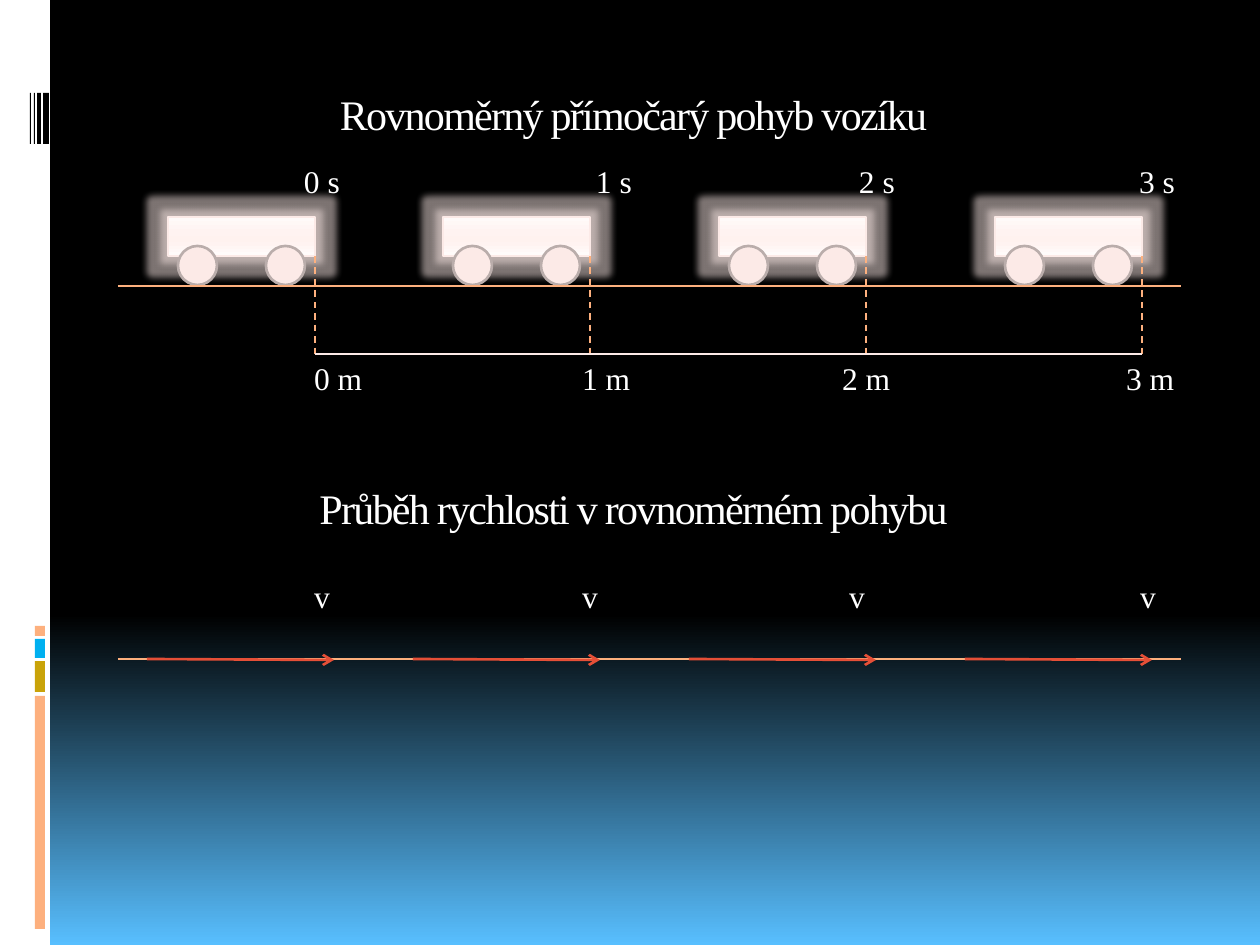
from lxml import etree
from pptx import Presentation
from pptx import util as u
from pptx.dml.color import RGBColor
from pptx.enum import dml, shapes, text
from pptx.oxml import ns

EMU_PER_PX = 914400 / 126
FONT = "Times New Roman"
WHITE, BLACK, PEACH, PINK, RED = "FFFFFF", "000000", "FDB07E", "FCEAE7", "E54F37"
BACKGROUND_STOPS = [(0, BLACK), (65, BLACK), (100, "58BFFF")]
CART_STOPS = [(0, "FFFAF9"), (40, "FFF3F1"), (50, "FFF2EF"), (65, "FFF3F1"), (100, "FFFBFA")]
CART_WIDTH, CART_HEIGHT, WHEEL = 147, 39, 39


def px(length):
    return u.Emu(round(length * EMU_PER_PX))


def rgb(value):
    return RGBColor.from_string(value)


def add_element(parent, tag, **attributes):
    return etree.SubElement(parent, ns.qn(tag), attributes)


def fill_gradient(fill, owner, stops):
    """Fill from top to bottom; owner is the XML element holding the fill."""
    fill.gradient()
    fill.gradient_angle = 270
    stop_list = owner.find(".//" + ns.qn("a:gsLst"))
    for old in list(stop_list):
        stop_list.remove(old)
    for percent, color in stops:
        stop = add_element(stop_list, "a:gs", pos=str(percent * 1000))
        add_element(stop, "a:srgbClr", val=color)


def add_figure(page, kind, left, top, width, height, color, line=None, line_width=1):
    figure = page.shapes.add_shape(kind, px(left), px(top), px(width), px(height))
    figure.shadow.inherit = False
    figure.fill.solid()
    figure.fill.fore_color.rgb = rgb(color)
    if line:
        figure.line.color.rgb = rgb(line)
        figure.line.width = u.Pt(line_width)
    else:
        figure.line.fill.background()
    return figure


def add_line(page, start, end, color, width=0.94, dashed=False, arrow=False):
    line = page.shapes.add_connector(shapes.MSO_CONNECTOR.STRAIGHT, *map(px, start + end))
    line.line.color.rgb = rgb(color)
    line.line.width = u.Pt(width)
    if dashed:
        line.line.dash_style = dml.MSO_LINE.DASH
    properties = line._element.spPr
    if arrow:
        add_element(properties.find(ns.qn("a:ln")), "a:tailEnd", type="arrow")
    add_element(properties, "a:effectLst")


def format_text(para, size):
    for span in para.runs:
        span.font.size = u.Pt(size)
        span.font.name = FONT
        span.font.color.rgb = rgb(WHITE)


def write_heading(box, left, top, words):
    box.left, box.top, box.width, box.height = map(px, (left, top, 1071, 69))
    frame = box.text_frame
    frame.word_wrap = True
    frame.vertical_anchor = text.MSO_ANCHOR.MIDDLE
    frame.text = words
    para = frame.paragraphs[0]
    para.alignment = text.PP_ALIGN.CENTER
    format_text(para, 24)
    para.runs[0].font._element.set("spc", "-100")


def add_label_row(page, left, top, labels, starts):
    """One line of labels, each beginning at its own distance from the left."""
    box = page.shapes.add_textbox(px(left), px(top), px(1063), px(50))
    frame = box.text_frame
    frame.word_wrap = True
    frame.margin_left = px(starts[0])
    frame.text = "\t".join(labels)
    para = frame.paragraphs[0]
    format_text(para, 18)
    tabs = add_element(para._p.get_or_add_pPr(), "a:tabLst")
    for start in starts[1:]:
        add_element(tabs, "a:tab", pos=str(px(start - starts[0])), algn="l")


def add_sidebar(page, left, top):
    rectangle = shapes.MSO_SHAPE.RECTANGLE
    add_figure(page, rectangle, left, top, 50, 945, WHITE)
    for offset, height, color in [(696, 233, PEACH), (661, 31, "C9A309"),
                                  (639, 19, "00B0F0"), (626, 10, PEACH)]:
        add_figure(page, rectangle, left + 35, top + offset, 10, height, color)
    for offset, width in [(43, 6), (37, 4), (34, 1), (30, 1)]:
        add_figure(page, rectangle, left + offset, top + 93, width, 51, BLACK)


def add_cart(page, left, top):
    body = add_figure(page, shapes.MSO_SHAPE.RECTANGLE, left, top, CART_WIDTH, CART_HEIGHT,
                      PINK, PINK, 0.94)
    properties = body._element.spPr
    fill_gradient(body.fill, properties, CART_STOPS)
    glow = add_element(properties.find(ns.qn("a:effectLst")), "a:glow", rad=str(px(14)))
    color = add_element(glow, "a:srgbClr", val=PINK)
    add_element(color, "a:alpha", val="50000")
    for offset in (10, 98):
        add_figure(page, shapes.MSO_SHAPE.OVAL, left + offset, top + 29, WHEEL, WHEEL,
                   PINK, "BAADAB", 1.5)


def add_motion(page, left, top):
    """Carts on the ground, with times above and distances below."""
    cart_lefts = [left + 50 + 827 * index // 3 for index in range(4)]
    fronts = [cart_left + CART_WIDTH for cart_left in cart_lefts]
    cart_top, ground, scale_line = top + 61, top + 130, top + 198
    for cart_left in cart_lefts:
        add_cart(page, cart_left, cart_top)
    add_line(page, (left, ground), (left + 1063, ground), PEACH, 1.5)
    for front in fronts:
        add_line(page, (front, cart_top + CART_HEIGHT), (front, scale_line), PEACH, dashed=True)
    add_line(page, (fronts[0], scale_line), (fronts[-1], scale_line), PINK)
    add_label_row(page, left + 39, top, ["0 s", "1 s", "2 s", "3 s"], [147, 439, 702, 982])
    add_label_row(page, left + 50, top + 197, ["0 m", "1 m", "2 m", "3 m"],
                  [146, 414, 674, 958])


def add_velocity(page, left, top):
    """Axis with equal velocity arrows."""
    axis = top + 88
    add_line(page, (left, axis), (left + 1063, axis), PEACH)
    for offset in (29, 295, 571, 847):
        start = left + offset
        add_line(page, (start, axis), (start + 187, axis + 1), RED, 1.5, arrow=True)
    add_label_row(page, left + 50, top, ["v"] * 4, [146, 414, 681, 972])


def main():
    deck = Presentation()
    deck.slide_width, deck.slide_height = px(1260), px(945)
    page = deck.slides.add_slide(deck.slide_layouts[5])
    fill_gradient(page.background.fill, page._element, BACKGROUND_STOPS)
    add_sidebar(page, 0, 0)
    write_heading(page.shapes.title, 98, 79, "Rovnoměrný přímočarý pohyb vozíku")
    add_motion(page, 118, 156)
    subheading = page.shapes.add_textbox(0, 0, 0, 0)
    write_heading(subheading, 98, 473, "Průběh rychlosti v rovnoměrném pohybu")
    add_velocity(page, 118, 571)
    deck.save("out.pptx")


if __name__ == "__main__":
    main()
